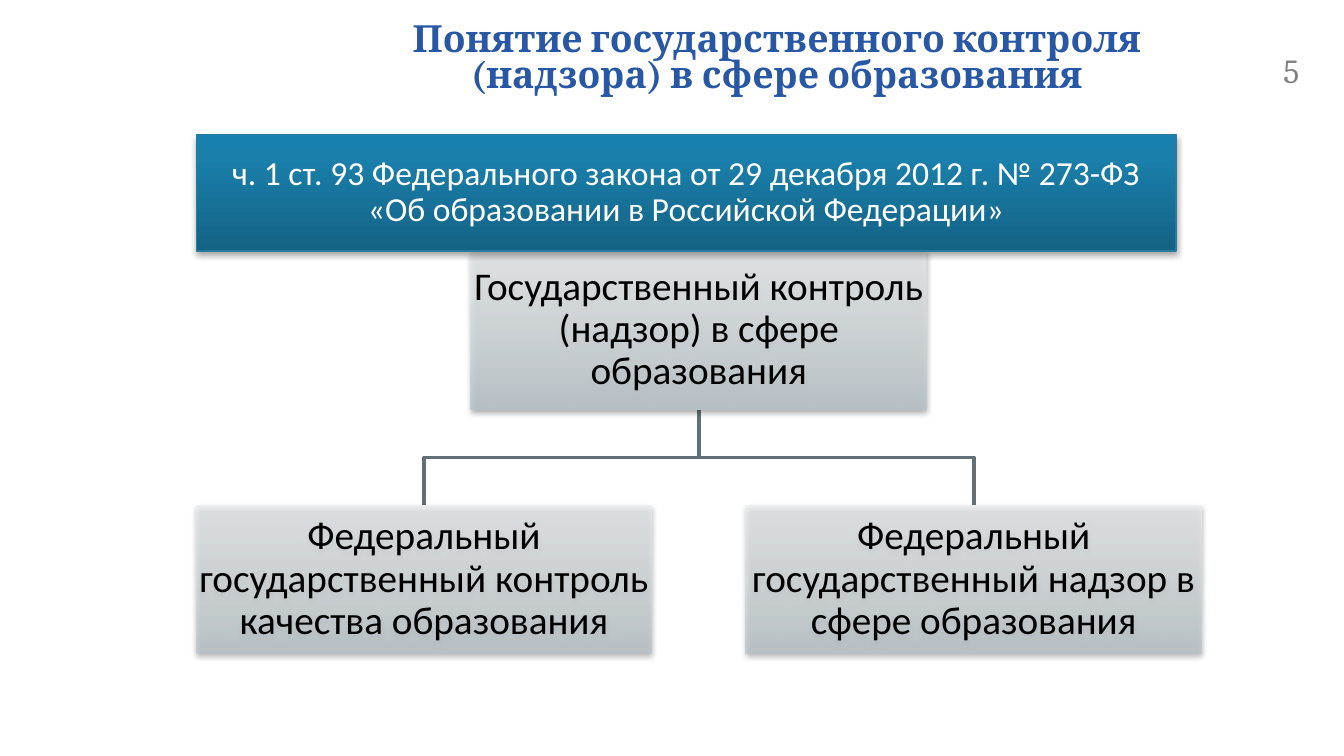
"""Build a slide on the concept of state control in education."""
from lxml.etree import SubElement
from pptx import Presentation
from pptx.dml.color import RGBColor as Rgb
from pptx.enum.shapes import MSO_SHAPE as Shape
from pptx.enum.text import MSO_ANCHOR as Anchor, PP_ALIGN as Align
from pptx.oxml import parse_xml
from pptx.oxml.ns import nsdecls, qn
from pptx.util import Pt

COLORS = {"title": "2857A5", "number": "808080", "branch": "627178",
          "edge": "287A9E", "light": "FFFFFF", "dark": "000000"}
GRAY = [(0, "B8C3CA"), (35, "CDD5D9"), (100, "ECEFF1")]
BLUE = [(0, "146284"), (80, "1A7FAB"), (100, "1780AE")]

TITLE = "Понятие государственного контроля (надзора) в сфере образования"
NUMBER = "5"
LAW = ("ч. 1 ст. 93 Федерального закона от 29 декабря 2012 г. № 273-ФЗ "
       "«Об образовании в Российской Федерации»")
ROOT = "Государственный контроль (надзор) в сфере образования"
CHILDREN = ["Федеральный государственный контроль качества образования",
            "Федеральный государственный надзор в сфере образования"]

LEFT = 105.1
BOX_WIDTH, BOX_GAP = 244.1, 50.4
ROOT_TOP, ROOT_HEIGHT = 133.9, 85.7
CHILD_TOP, CHILD_HEIGHT = 270.7, 79.5
BANNER = (LEFT, 72, 524.9, 62.6)


def write(box, text, size, font, color, align=Align.CENTER, spacing=1.0,
          insets=(7.2, 3.6), bold=False):
    frame = box.text_frame
    frame.word_wrap = True
    frame.vertical_anchor = Anchor.MIDDLE
    frame.margin_left = frame.margin_right = Pt(insets[0])
    frame.margin_top = frame.margin_bottom = Pt(insets[1])
    para = frame.paragraphs[0]
    para.text = text
    para.alignment = align
    para.line_spacing = spacing
    para.font.size = Pt(size)
    para.font.name = font
    para.font.bold = bold
    para.font.color.rgb = Rgb.from_string(COLORS[color])


def add_label(page, place, text, size, color, **style):
    box = page.shapes.add_textbox(*map(Pt, place))
    write(box, text, size, "Cambria", color, **style)


def add_panel(page, place, text, size, color, stops, opacity, shadow, insets, edge=None):
    panel = page.shapes.add_shape(Shape.RECTANGLE, *map(Pt, place))
    marks = "".join(
        f'<a:gs pos="{position * 1000}"><a:srgbClr val="{tone}">'
        f'<a:alpha val="{opacity * 1000}"/></a:srgbClr></a:gs>'
        for position, tone in stops)
    gradient = parse_xml(
        f'<a:gradFill {nsdecls("a")} rotWithShape="1"><a:gsLst>{marks}</a:gsLst>'
        '<a:lin ang="16200000" scaled="0"/></a:gradFill>')
    properties = panel.element.spPr
    properties.find(qn("a:prstGeom")).addnext(gradient)
    if edge:
        panel.line.color.rgb = Rgb.from_string(COLORS[edge])
        panel.line.width = Pt(0.75)
    else:
        panel.line.fill.background()
    panel.shadow.inherit = False
    distance, strength = shadow
    shade = SubElement(properties.find(qn("a:effectLst")), qn("a:outerShdw"),
                       blurRad=str(Pt(3.1)), dist=str(Pt(distance)),
                       dir="5400000", rotWithShape="0")
    tone = SubElement(shade, qn("a:srgbClr"), val=COLORS["dark"])
    SubElement(tone, qn("a:alpha"), val=str(strength * 1000))
    write(panel, text, size, "Calibri", color, spacing=0.9, insets=insets)


def add_branch(page, start, end):
    middle = (start[1] + end[1]) / 2
    corners = [(start[0], middle), (end[0], middle), end]
    builder = page.shapes.build_freeform(Pt(start[0]), Pt(start[1]))
    builder.add_line_segments([(Pt(x), Pt(y)) for x, y in corners], close=False)
    branch = builder.convert_to_shape()
    branch.fill.background()
    branch.line.color.rgb = Rgb.from_string(COLORS["branch"])
    branch.line.width = Pt(2)
    branch.shadow.inherit = False


def main():
    deck = Presentation()
    deck.slide_width, deck.slide_height = Pt(720), Pt(405)
    page = deck.slides.add_slide(deck.slide_layouts[6])

    add_label(page, (188.6, 9.4, 455, 45.4), TITLE, 20, "title", spacing=0.8, bold=True)
    add_label(page, (680.4, 22.3, 39.6, 31), NUMBER, 18, "number", align=Align.LEFT)

    child_lefts = [LEFT + i * (BOX_WIDTH + BOX_GAP) for i in range(len(CHILDREN))]
    root_left = sum(child_lefts) / len(child_lefts)
    half = BOX_WIDTH / 2
    for left in child_lefts:
        add_branch(page, (root_left + half, ROOT_TOP + ROOT_HEIGHT), (left + half, CHILD_TOP))

    nodes = [(root_left, ROOT_TOP, ROOT_HEIGHT, ROOT, 80)]
    nodes += [(left, CHILD_TOP, CHILD_HEIGHT, text, 70)
              for left, text in zip(child_lefts, CHILDREN)]
    for left, top, height, text, opacity in nodes:
        add_panel(page, (left, top, BOX_WIDTH, height), text, 21, "dark", GRAY,
                  opacity, (1.6, 38), (0.9, 0.9))
    add_panel(page, BANNER, LAW, 18, "light", BLUE, 100, (1.8, 35), (10, 5.8), "edge")

    deck.save("out.pptx")


if __name__ == "__main__":
    main()
